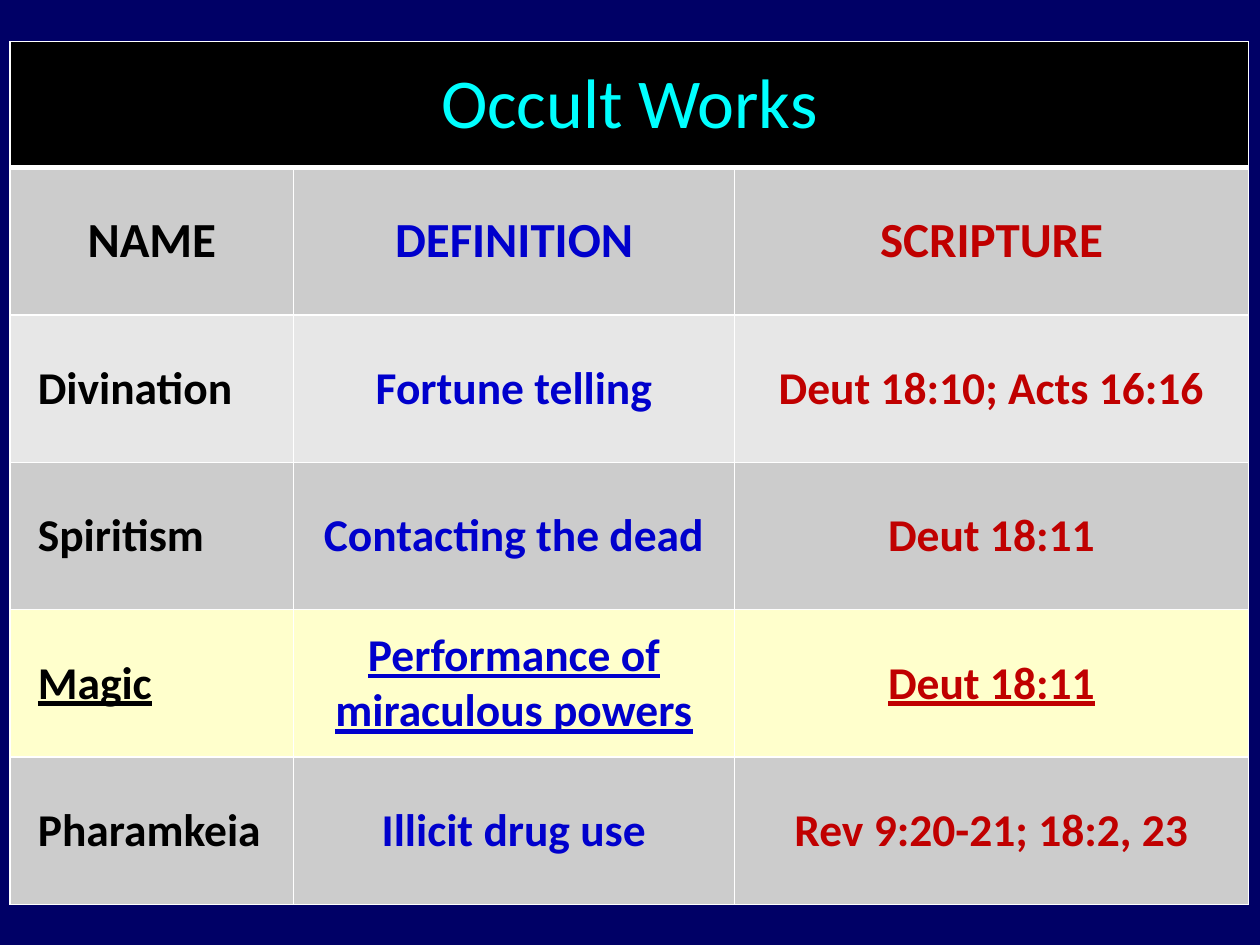
from lxml.etree import SubElement
from pptx import Presentation
from pptx.dml.color import RGBColor
from pptx.enum.text import MSO_ANCHOR, PP_ALIGN
from pptx.oxml.ns import qn
from pptx.util import Inches, Pt

TITLE = "Occult Works"
HEADINGS = ("NAME", "DEFINITION", "SCRIPTURE")
WORKS = [
    ("Divination", "Fortune telling", "Deut 18:10; Acts 16:16"),
    ("Spiritism", "Contacting the dead", "Deut 18:11"),
    ("Magic", "Performance of miraculous powers", "Deut 18:11"),
    ("Pharamkeia", "Illicit drug use", "Rev 9:20-21; 18:2, 23"),
]
HIGHLIGHTED = "Magic"

THEME = {
    "font": "Calibri",
    "background": "000066",
    "title": "00FFFF",
    "title_fill": "000000",
    "columns": ("000000", "0000CC", "C00000"),
    "bands": ("CCCCCC", "E7E7E7"),
    "highlight": "FFFFCC",
    "border": "FFFFFF",
    "title_size": 40,
    "heading_size": 28,
    "body_size": 26,
    "thin": 1,
    "thick": 3,
}

LEFT, TOP = 0.08, 0.33
COLUMN_WIDTHS = (2.25, 3.5, 4.08)
TITLE_HEIGHT, ROW_HEIGHT = 1, 1.17
NAME_INDENT = 0.12


def style_cell(cell, fill, top=THEME["thin"], bottom=THEME["thin"]):
    properties = cell._tc.get_or_add_tcPr()
    widths = {"lnL": THEME["thin"], "lnR": THEME["thin"], "lnT": top, "lnB": bottom}
    for tag, width in widths.items():
        line = SubElement(properties, qn(f"a:{tag}"), w=str(Pt(width)))
        solid = SubElement(line, qn("a:solidFill"))
        SubElement(solid, qn("a:srgbClr"), val=THEME["border"])
    cell.fill.solid()
    cell.fill.fore_color.rgb = RGBColor.from_string(fill)
    cell.vertical_anchor = MSO_ANCHOR.MIDDLE


def write_cell(cell, text, size, color, bold=True, underline=False, indented=False):
    paragraph = cell.text_frame.paragraphs[0]
    if indented:
        paragraph.alignment = PP_ALIGN.LEFT
        paragraph._p.get_or_add_pPr().set("marL", str(Inches(NAME_INDENT)))
    else:
        paragraph.alignment = PP_ALIGN.CENTER
    run = paragraph.add_run()
    run.text = text
    run.font.name = THEME["font"]
    run.font.size = Pt(size)
    run.font.bold = bold
    run.font.underline = underline
    run.font.color.rgb = RGBColor.from_string(color)


def fill_title(table):
    for cell in table.rows[0].cells:
        style_cell(cell, THEME["title_fill"], bottom=THEME["thick"])
    title = table.cell(0, 0)
    title.merge(table.cell(0, len(HEADINGS) - 1))
    write_cell(title, TITLE, THEME["title_size"], THEME["title"], bold=False)


def fill_rows(table):
    for index, texts in enumerate([HEADINGS, *WORKS]):
        heading = index == 0
        highlighted = texts[0] == HIGHLIGHTED
        fill = THEME["highlight"] if highlighted else THEME["bands"][index % 2]
        if index == len(WORKS):
            fill = THEME["bands"][0]
        size = THEME["heading_size"] if heading else THEME["body_size"]
        top = THEME["thick"] if heading else THEME["thin"]
        for column, (text, color) in enumerate(zip(texts, THEME["columns"])):
            cell = table.cell(index + 1, column)
            style_cell(cell, fill, top=top)
            write_cell(cell, text, size, color, underline=highlighted,
                       indented=column == 0 and not heading)


def main():
    presentation = Presentation()
    presentation.slide_width, presentation.slide_height = Inches(10), Inches(7.5)
    slide = presentation.slides.add_slide(presentation.slide_layouts[6])
    slide.background.fill.solid()
    slide.background.fill.fore_color.rgb = RGBColor.from_string(THEME["background"])

    heights = [TITLE_HEIGHT] + [ROW_HEIGHT] * (len(WORKS) + 1)
    table = slide.shapes.add_table(
        len(heights), len(COLUMN_WIDTHS), Inches(LEFT), Inches(TOP),
        Inches(sum(COLUMN_WIDTHS)), Inches(sum(heights))).table
    for column, width in zip(table.columns, COLUMN_WIDTHS):
        column.width = Inches(width)
    for row, height in zip(table.rows, heights):
        row.height = Inches(height)
    fill_title(table)
    fill_rows(table)
    presentation.save("out.pptx")


if __name__ == "__main__":
    main()
